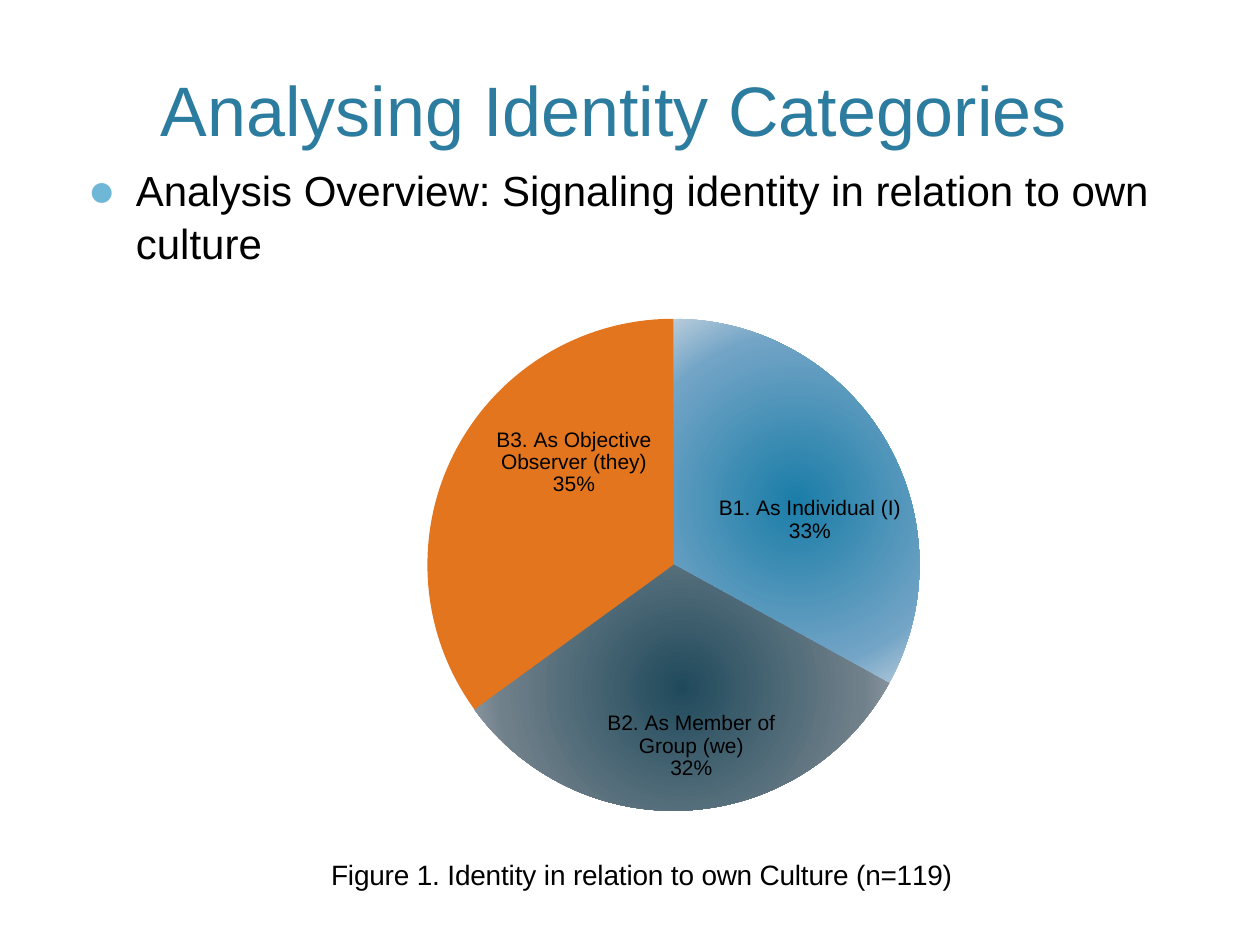
from pptx import Presentation
from pptx.chart.data import CategoryChartData as ChartData
from pptx.dml.color import RGBColor
from pptx.enum.chart import XL_CHART_TYPE as ChartType
from pptx.enum.text import MSO_ANCHOR as Anchor, PP_ALIGN as Align
from pptx.oxml import parse_xml
from pptx.oxml.ns import nsdecls, qn
from pptx.util import Inches, Pt

FONT = "Arial"
BLACK = RGBColor(0x00, 0x00, 0x00)
BLUE = RGBColor(0x2C, 0x7C, 0x9F)
SKY = RGBColor(0x6F, 0xB7, 0xD7)
ORANGE = RGBColor(0xE2, 0x75, 0x1D)
# Radial fills: centre, middle and rim colours
BLUES = [RGBColor(0x1B, 0x7D, 0xA8), RGBColor(0x72, 0xA4, 0xC6),
         RGBColor(0xB8, 0xCC, 0xDB)]
SLATES = [RGBColor(0x20, 0x4A, 0x5C), RGBColor(0x70, 0x80, 0x8A),
          RGBColor(0xA0, 0xAA, 0xB2)]
STOPS = [0, 75, 100]

# Category, percent, label shift as a share of the chart
SLICES = [
    ("B1. As Individual (I)", 33, (0.03, 0.03)),
    ("B2. As Member of Group (we)", 32, (0.01, 0.1)),
    ("B3. As Objective Observer (they)", 35, (0.01, -0.08)),
]


def style(font, size, color):
    font.name, font.size, font.color.rgb = FONT, Pt(size), color


def add_text(slide, box, text, size, color):
    frame = slide.shapes.add_textbox(*map(Inches, box)).text_frame
    frame.word_wrap = True
    para = frame.paragraphs[0]
    para.text = text
    style(para.font, size, color)
    return frame, para


def add_bullet(para, indent):
    props = para._p.get_or_add_pPr()
    props.set("marL", str(Inches(indent)))
    props.set("indent", str(-Inches(indent)))
    for xml in (f'<a:buClr {nsdecls("a")}><a:srgbClr val="{SKY}"/></a:buClr>',
                f'<a:buSzPct {nsdecls("a")} val="110000"/>',
                f'<a:buFont {nsdecls("a")} typeface="{FONT}"/>',
                f'<a:buChar {nsdecls("a")} char="●"/>'):
        props.append(parse_xml(xml))


def layout(x, y, modes="", size=""):
    return (f'<c:layout {nsdecls("c")}><c:manualLayout>{modes}'
            f'<c:x val="{x}"/><c:y val="{y}"/>{size}'
            '</c:manualLayout></c:layout>')


def set_layout(node, xml, after=None):
    old = node.find(qn("c:layout"))
    if old is not None:
        node.remove(old)
    if after is None:
        node.insert(0, parse_xml(xml))
    else:
        node.find(qn(after)).addnext(parse_xml(xml))


def fill_radial(series, index, colors):
    series.points[index].format.fill.background()
    props = series._element.findall(qn("c:dPt"))[index].find(qn("c:spPr"))
    stops = "".join(
        f'<a:gs pos="{pos * 1000}"><a:srgbClr val="{color}"/></a:gs>'
        for pos, color in zip(STOPS, colors))
    props.replace(props.find(qn("a:noFill")), parse_xml(
        f'<a:gradFill {nsdecls("a")} rotWithShape="1"><a:gsLst>{stops}</a:gsLst>'
        '<a:path path="circle"><a:fillToRect l="50000" t="50000" r="50000" '
        'b="50000"/></a:path></a:gradFill>'))


def add_labels(series):
    """Show category and percent, each label shifted from its slice centre."""
    show = ('<c:dLblPos val="ctr"/><c:showLegendKey val="0"/><c:showVal val="0"/>'
            '<c:showCatName val="1"/><c:showSerName val="0"/>'
            '<c:showPercent val="1"/><c:showBubbleSize val="0"/>'
            '<c:separator>\n</c:separator>')
    form = '<c:numFmt formatCode="0%" sourceLinked="0"/>'
    each = "".join(
        f'<c:dLbl><c:idx val="{i}"/>{layout(*shift)}{form}{show}</c:dLbl>'
        for i, (_, _, shift) in enumerate(SLICES))
    labels = parse_xml(f'<c:dLbls {nsdecls("c")}>{each}{form}{show}'
                       '<c:showLeaderLines val="0"/></c:dLbls>')
    series._element.find(qn("c:cat")).addprevious(labels)


def add_pie(slide, box):
    data = ChartData()
    data.categories = [name for name, _, _ in SLICES]
    data.add_series("Series 1", [value for _, value, _ in SLICES])
    chart = slide.shapes.add_chart(ChartType.PIE, *map(Inches, box), data).chart
    style(chart.font, 12, BLACK)
    chart.has_legend = False

    plot = chart.plots[0]
    plot.vary_by_categories = True
    series = plot.series[0]
    fill_radial(series, 0, BLUES)
    fill_radial(series, 1, SLATES)
    fill = series.points[2].format.fill
    fill.solid()
    fill.fore_color.rgb = ORANGE
    add_labels(series)

    chart.has_title = True
    title = chart.chart_title
    para = title.text_frame.paragraphs[0]
    para.text = "Figure 1. Identity in relation to own Culture (n=119)"
    style(para.font, 16, BLACK)
    para.font.bold = False
    edge = '<c:xMode val="edge"/><c:yMode val="edge"/>'
    set_layout(title._element, layout(0.16, 0.91, edge), "c:tx")
    area = chart._chartSpace.find(qn("c:chart")).find(qn("c:plotArea"))
    set_layout(area, layout(0, 0, '<c:layoutTarget val="inner"/>' + edge,
                            '<c:w val="1"/><c:h val="0.84"/>'))


def main():
    deck = Presentation()
    deck.slide_width, deck.slide_height = Inches(10), Inches(7.5)
    slide = deck.slides.add_slide(deck.slide_layouts[6])

    frame, para = add_text(slide, (0.35, 0.1, 9.04, 1.14),
                           "Analysing Identity Categories", 40, BLUE)
    frame.vertical_anchor = Anchor.BOTTOM
    para.alignment = Align.CENTER

    _, para = add_text(
        slide, (0.6, 1.24, 8.8, 5.94),
        "Analysis Overview: Signaling identity in relation to own culture",
        24, BLACK)
    para.line_spacing = 1.05
    add_bullet(para, 0.38)

    add_pie(slide, (1.29, 2.53, 8.11, 4.65))
    deck.save("out.pptx")


if __name__ == "__main__":
    main()
